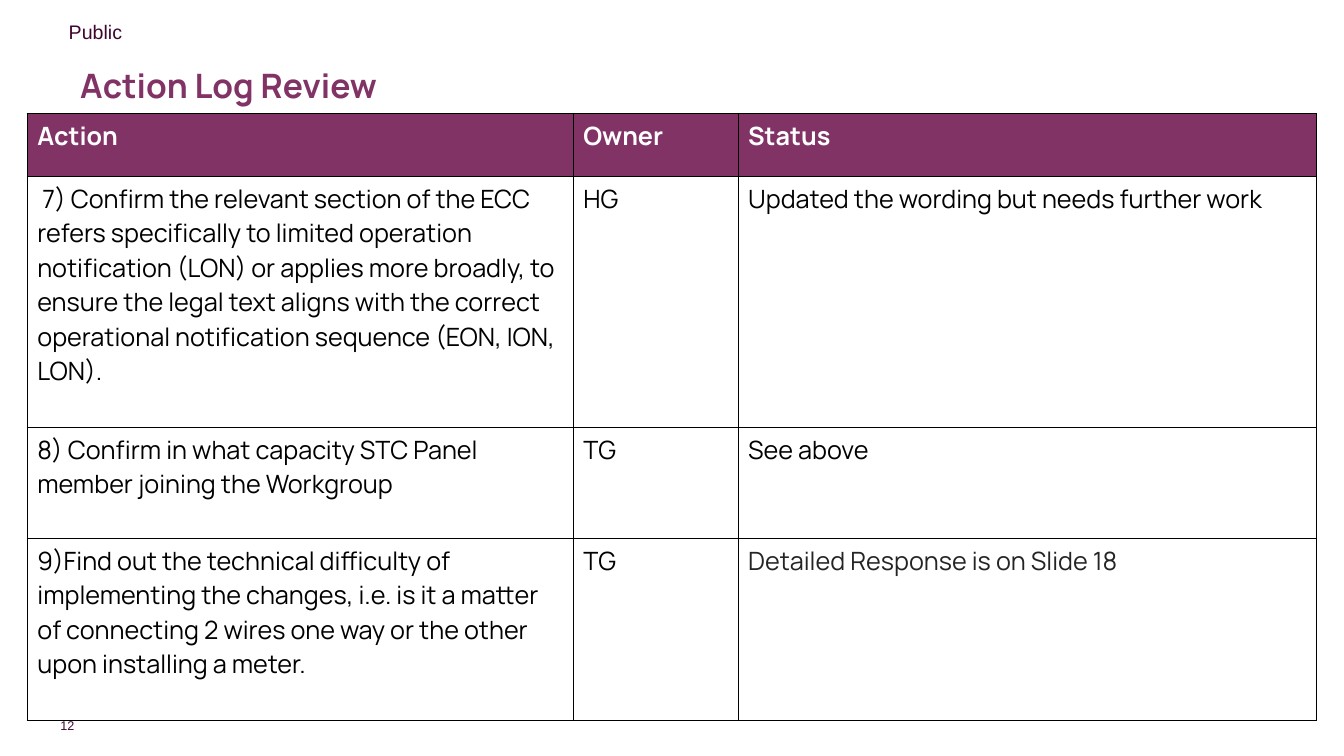
from lxml.etree import SubElement
from pptx import Presentation
from pptx.dml.color import RGBColor
from pptx.enum.text import MSO_ANCHOR as Anchor, MSO_AUTO_SIZE as AutoSize, PP_ALIGN as Align
from pptx.oxml.ns import qn
from pptx.util import Pt

PX = 9525
COLOURS = {
    "purple": "813366",
    "plum": "3F0730",
    "white": "FFFFFF",
    "black": "000000",
    "charcoal": "242424",
}
COLUMN_WIDTHS = [520, 157, 551]
ROW_HEIGHTS = [60, 239, 106, 173]
ACTION_LOG = [
    ["Action", "Owner", "Status"],
    [" 7) Confirm the relevant section of the ECC refers specifically to limited operation "
     "notification (LON) or applies more broadly, to ensure the legal text aligns with the "
     "correct operational notification sequence (EON, ION, LON).",
     "HG", "Updated the wording but needs further work"],
    ["8) Confirm in what capacity STC Panel member joining the Workgroup", "TG", "See above"],
    ["9)Find out the technical difficulty of implementing the changes, i.e. is it a matter of "
     "connecting 2 wires one way or the other upon installing a meter.",
     "TG", "Detailed Response is on Slide 18"],
]


class SlideBuilder:
    def __init__(self, presentation):
        self.slide = presentation.slides.add_slide(presentation.slide_layouts[6])

    def style(self, paragraph, size, colour, font="Manrope", bold=False):
        paragraph.font.name = font
        paragraph.font.size = Pt(size)
        paragraph.font.bold = bold
        paragraph.font.color.rgb = RGBColor.from_string(COLOURS[colour])

    def text(self, words, box, size, colour, font="Manrope", bold=False,
             anchor=Anchor.TOP, wrap=True, inset=True):
        frame = self.slide.shapes.add_textbox(*(n * PX for n in box)).text_frame
        frame.auto_size = AutoSize.NONE
        frame.word_wrap = wrap
        frame.vertical_anchor = anchor
        if not inset:
            frame.margin_left = frame.margin_right = 0
            frame.margin_top = frame.margin_bottom = 0
        paragraph = frame.paragraphs[0]
        paragraph.text = words
        self.style(paragraph, size, colour, font, bold)
        return paragraph

    def border(self, cell):
        properties = cell._tc.get_or_add_tcPr()
        for side in ("a:lnL", "a:lnR", "a:lnT", "a:lnB"):
            line = SubElement(properties, qn(side), w=str(Pt(1)))
            fill = SubElement(line, qn("a:solidFill"))
            SubElement(fill, qn("a:srgbClr"), val=COLOURS["black"])

    def table(self, rows, left, top, widths, heights):
        frame = self.slide.shapes.add_table(
            len(rows), len(widths), left * PX, top * PX, sum(widths) * PX, sum(heights) * PX)
        table = frame.table
        table.horz_banding = False
        for column, width in zip(table.columns, widths):
            column.width = width * PX
        for row, height, texts in zip(table.rows, heights, rows):
            row.height = height * PX
            header = texts is rows[0]
            for cell, words in zip(row.cells, texts):
                self.border(cell)
                if header:
                    cell.fill.solid()
                    cell.fill.fore_color.rgb = RGBColor.from_string(COLOURS["purple"])
                else:
                    cell.fill.background()
                cell.text = words
                self.style(cell.text_frame.paragraphs[0], 18,
                           "white" if header else "black", bold=header)
        return table


def main():
    presentation = Presentation()
    presentation.slide_width = 1280 * PX
    presentation.slide_height = 720 * PX
    builder = SlideBuilder(presentation)

    page_number = builder.text("12", (57, 684, 14, 14), 9, "plum", "Arial",
                               anchor=Anchor.MIDDLE, wrap=False, inset=False)
    page_number.alignment = Align.RIGHT
    builder.text("Public", (56, 14, 480, 33), 14, "plum", "Arial")
    title = builder.text("Action Log Review", (67, 38, 1020, 91), 24, "purple",
                         bold=True, anchor=Anchor.MIDDLE)
    title.line_spacing = 0.9

    action_log = builder.table(ACTION_LOG, 26, 108, COLUMN_WIDTHS, ROW_HEIGHTS)
    response = action_log.cell(3, 2).text_frame.paragraphs[0]
    builder.style(response, 18, "charcoal")

    presentation.save("out.pptx")


if __name__ == "__main__":
    main()
